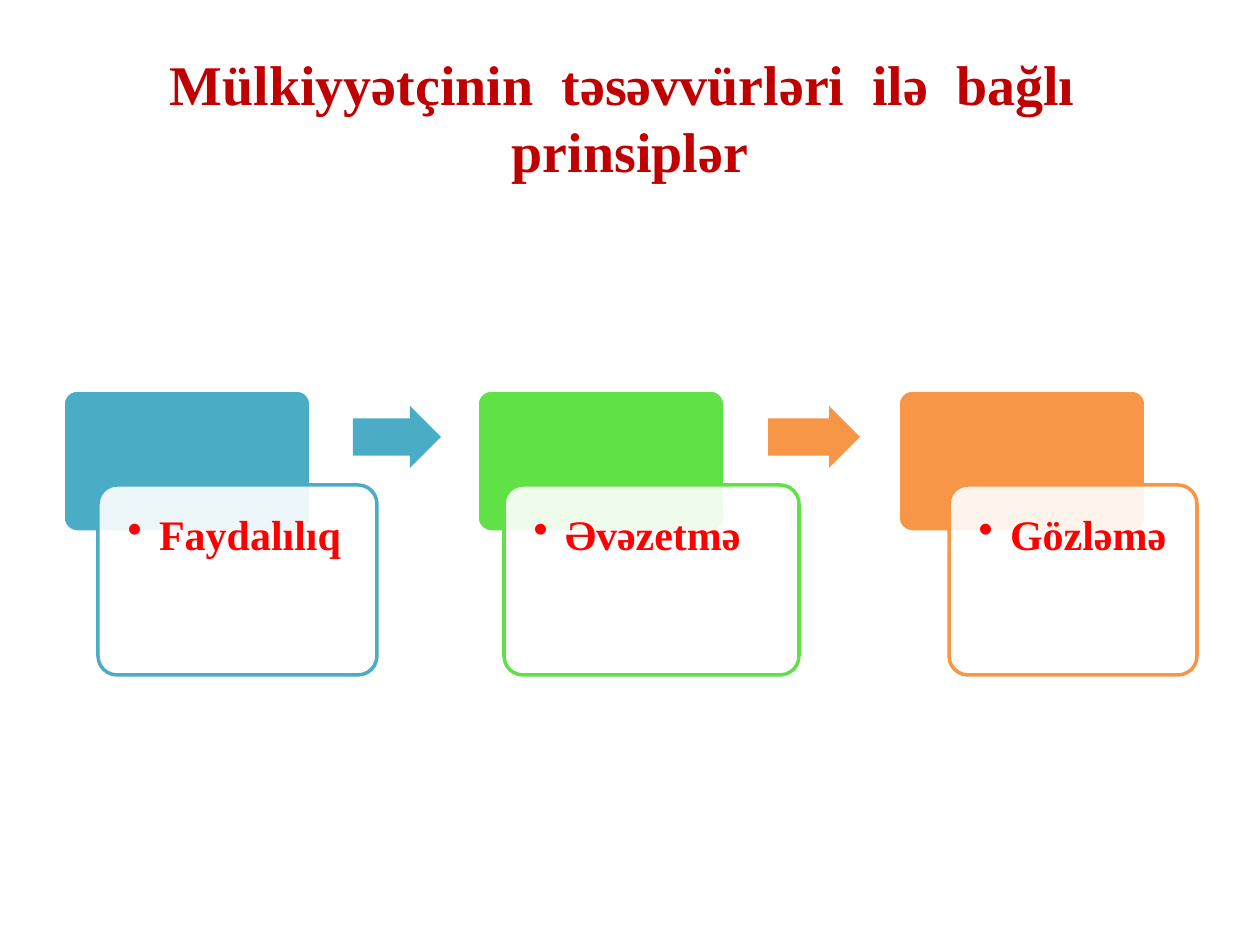
"""Builds a slide with three principles linked by arrows."""
import dataclasses

import lxml.etree
import pptx
import pptx.dml.color
import pptx.enum.shapes
import pptx.enum.text
import pptx.oxml.ns
import pptx.util

SHAPES = pptx.enum.shapes.MSO_SHAPE
ANCHORS = pptx.enum.text.MSO_ANCHOR
ALIGNMENTS = pptx.enum.text.PP_ALIGN


@dataclasses.dataclass(frozen=True)
class Theme:
    font: str = "Times New Roman"
    title_size: int = 32
    label_size: int = 24
    line_width: int = 2
    title: str = "C00000"
    label: str = "FF0000"
    paper: str = "FFFFFF"
    teal: str = "4BACC6"
    green: str = "60E146"
    orange: str = "F79646"


class SlideBuilder:
    EMU_PER_PX = 914400 / 126

    def __init__(self, presentation, theme):
        self.theme = theme
        presentation.slide_width = self.px(1260)
        presentation.slide_height = self.px(945)
        self.slide = presentation.slides.add_slide(presentation.slide_layouts[6])

    def px(self, length):
        return pptx.util.Emu(round(length * self.EMU_PER_PX))

    def color(self, value):
        return pptx.dml.color.RGBColor.from_string(value)

    def set_words(self, frame, words, size, color):
        frame.word_wrap = True
        frame.text = words
        paragraph = frame.paragraphs[0]
        font = paragraph.runs[0].font
        font.name = self.theme.font
        font.size = pptx.util.Pt(size)
        font.bold = True
        font.color.rgb = self.color(color)
        return paragraph

    def title(self, words, box):
        heading = self.slide.shapes.add_textbox(*map(self.px, box))
        frame = heading.text_frame
        frame.vertical_anchor = ANCHORS.MIDDLE
        paragraph = self.set_words(frame, words, self.theme.title_size, self.theme.title)
        paragraph.alignment = ALIGNMENTS.CENTER

    def shape(self, preset, box, adjustments, fill, line=None):
        figure = self.slide.shapes.add_shape(preset, *map(self.px, box))
        figure.shadow.inherit = False
        for index, value in enumerate(adjustments):
            figure.adjustments[index] = value
        figure.fill.solid()
        figure.fill.fore_color.rgb = self.color(fill)
        if line:
            figure.line.color.rgb = self.color(line)
            figure.line.width = pptx.util.Pt(self.theme.line_width)
        else:
            figure.line.fill.background()
        return figure

    def panel(self, left, color):
        self.shape(SHAPES.ROUNDED_RECTANGLE, (left, 390, 248, 142), [0.1], color, self.theme.paper)

    def arrow(self, left, width, color):
        self.shape(SHAPES.RIGHT_ARROW, (left, 406, width, 62), [0.6, 0.5], color)

    def card(self, words, left, width, color):
        card = self.shape(
            SHAPES.ROUNDED_RECTANGLE, (left, 485, width, 190), [0.1], self.theme.paper, color
        )
        qn = pptx.oxml.ns.qn
        paper = card.element.spPr.find(qn("a:solidFill"))[0]
        lxml.etree.SubElement(paper, qn("a:alpha"), val="90000")
        frame = card.text_frame
        frame.vertical_anchor = ANCHORS.TOP
        frame.margin_left = frame.margin_top = frame.margin_bottom = self.px(24)
        frame.margin_right = self.px(20)
        paragraph = self.set_words(frame, words, self.theme.label_size, self.theme.label)
        paragraph.alignment = ALIGNMENTS.LEFT
        paragraph.line_spacing = 0.9
        properties = paragraph._p.get_or_add_pPr()
        indent = pptx.util.Inches(0.25)
        properties.set("marL", str(indent))
        properties.set("indent", str(-indent))
        lxml.etree.SubElement(properties, qn("a:buChar"), char="•")


def main():
    presentation = pptx.Presentation()
    theme = Theme()
    builder = SlideBuilder(presentation, theme)
    builder.title(
        "Mülkiyyətçinin  təsəvvürləri  ilə  bağlı  prinsiplər", (63, 38, 1134, 157)
    )
    principles = [
        ("Faydalılıq", theme.teal, 63, 98, 279),
        ("Əvəzetmə", theme.green, 477, 504, 295),
        ("Gözləmə", theme.orange, 898, 949, 248),
    ]
    for words, color, panel_left, card_left, card_width in principles:
        builder.panel(panel_left, color)
        builder.card(words, card_left, card_width, color)
    for left, width, color in [(353, 88, theme.teal), (768, 92, theme.orange)]:
        builder.arrow(left, width, color)
    presentation.save("out.pptx")


if __name__ == "__main__":
    main()
